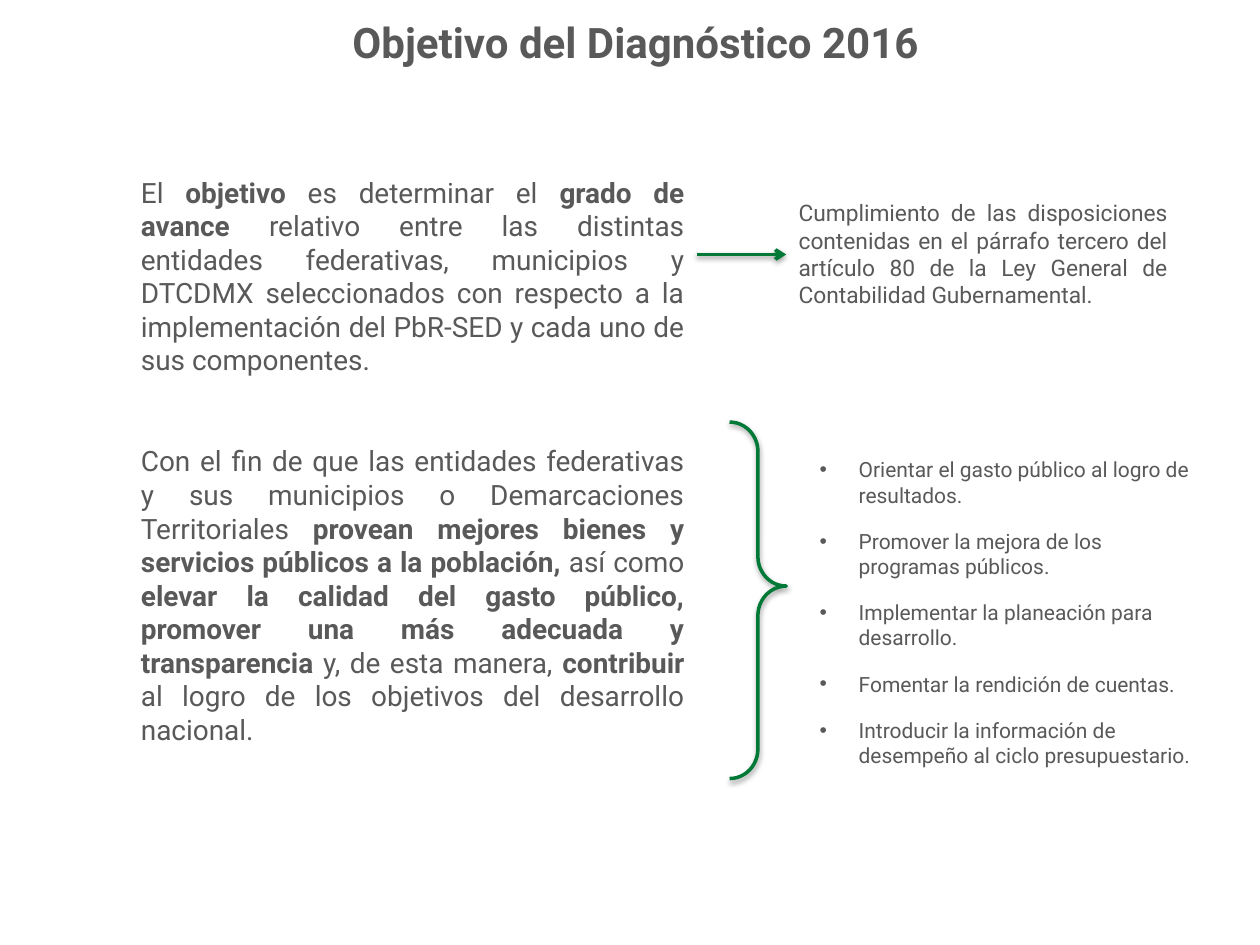
import pptx
import pptx.util
import pptx.dml.color
import pptx.enum.text
import pptx.enum.shapes
import pptx.oxml
import pptx.oxml.ns

GRAY, GREEN, FONT = "595959", "007836", "Roboto"
WIDE, HIGH = 10, 7.5
LEFT, MID, NOTE, LIST, EDGE = 1.02, 5.53, 6.24, 6.35, 9.62

TITLE = [[("Objetivo del Diagnóstico 2016", True)]]
GOAL = [
    [
        ("El ", False),
        ("objetivo", True),
        (" es determinar el ", False),
        ("grado de avance ", True),
        ("relativo entre las distintas entidades federativas, municipios y DTCDMX "
         "seleccionados con respecto a la implementación del PbR-SED y cada uno de "
         "sus componentes.", False),
    ],
    [
        ("Con el fin de que las entidades federativas y sus municipios o "
         "Demarcaciones Territoriales ", False),
        ("provean mejores bienes y servicios públicos a la población, ", True),
        ("así como ", False),
        ("elevar la calidad del gasto público, promover una más adecuada y "
         "transparencia", True),
        (" y, de esta manera, ", False),
        ("contribuir ", True),
        ("al logro de los objetivos del desarrollo nacional.", False),
    ],
]
LAW = [[("Cumplimiento de las disposiciones contenidas en el párrafo tercero del "
         "artículo 80 de la Ley General de Contabilidad Gubernamental.", False)]]
AIMS = [[(text, False)] for text in (
    "Orientar el gasto público al logro de resultados.",
    "Promover la mejora de los programas públicos.",
    "Implementar la planeación para desarrollo.",
    "Fomentar la rendición de cuentas.",
    "Introducir la información de desempeño al ciclo presupuestario.",
)]

Align = pptx.enum.text.PP_ALIGN
Anchor = pptx.enum.text.MSO_ANCHOR
Shape = pptx.enum.shapes.MSO_SHAPE
inch = pptx.util.Inches


def color(code):
    return pptx.dml.color.RGBColor.from_string(code)


def box(*sides):
    return [inch(side) for side in sides]


def node(body):
    return pptx.oxml.parse_xml(body.replace(
        ">", " " + pptx.oxml.ns.nsdecls("a") + ">", 1))


def write(shape, paras, size, align, gap=0, anchor=Anchor.TOP, dots=False):
    frame = shape.text_frame
    frame.word_wrap = True
    frame.auto_size = pptx.enum.text.MSO_AUTO_SIZE.NONE
    frame.vertical_anchor = anchor
    for i, runs in enumerate(paras):
        para = frame.add_paragraph() if i else frame.paragraphs[0]
        para.alignment = align
        para.space_before = pptx.util.Pt(gap if i else 0)
        if dots:
            props = para._p.get_or_add_pPr()
            props.set("marL", str(inch(0.31)))
            props.set("indent", str(-inch(0.31)))
            props.append(node('<a:buFont typeface="Arial"></a:buFont>'))
            props.append(node('<a:buChar char="•"></a:buChar>'))
        for text, bold in runs:
            run = para.add_run()
            run.text = text
            run.font.name = FONT
            run.font.size = pptx.util.Pt(size)
            run.font.bold = bold
            run.font.color.rgb = color(GRAY)


def stroke(shape):
    shape.line.color.rgb = color(GREEN)
    shape.line.width = pptx.util.Pt(2)
    blur, dist = pptx.util.Pt(3.1), pptx.util.Pt(1.6)
    shape._element.spPr.append(node(
        f'<a:effectLst><a:outerShdw blurRad="{blur}" dist="{dist}" dir="5400000" '
        'rotWithShape="0"><a:srgbClr val="000000"><a:alpha val="38000"/>'
        '</a:srgbClr></a:outerShdw></a:effectLst>'))


def main():
    deck = pptx.Presentation()
    deck.slide_width, deck.slide_height = box(WIDE, HIGH)
    slide = deck.slides.add_slide(deck.slide_layouts[5])
    shapes = slide.shapes

    title = shapes.title
    title.left, title.top, title.width, title.height = box(0.47, 0.08, EDGE - 0.47, 0.5)
    write(title, TITLE, 24, Align.CENTER)

    goal = shapes.add_textbox(*box(LEFT, 1.34, MID - LEFT, 4.68))
    write(goal, GOAL, 16, Align.JUSTIFY, 38.5)

    aims = shapes.add_shape(
        Shape.ROUNDED_RECTANGLE, *box(LIST, 3.08, EDGE - LIST, 3.56))
    aims.adjustments[0] = 0.06
    aims.shadow.inherit = False
    aims.fill.background()
    aims.line.fill.background()
    write(aims, AIMS, 12, Align.LEFT, 12, Anchor.MIDDLE, True)

    brace = shapes.add_shape(Shape.RIGHT_BRACE, *box(5.79, 3.35, 0.45, 2.83))
    brace.adjustments[0] = 0.52
    brace.adjustments[1] = 0.46
    brace.fill.background()
    stroke(brace)

    law = shapes.add_textbox(*box(NOTE, 1.53, 3.12, 0.98))
    write(law, LAW, 13, Align.JUSTIFY)

    arrow = shapes.add_connector(
        pptx.enum.shapes.MSO_CONNECTOR.STRAIGHT, *box(MID, 2.02, NOTE, 2.02))
    stroke(arrow)
    arrow.line._get_or_add_ln().append(node('<a:tailEnd type="arrow"></a:tailEnd>'))

    deck.save("out.pptx")


if __name__ == "__main__":
    main()
